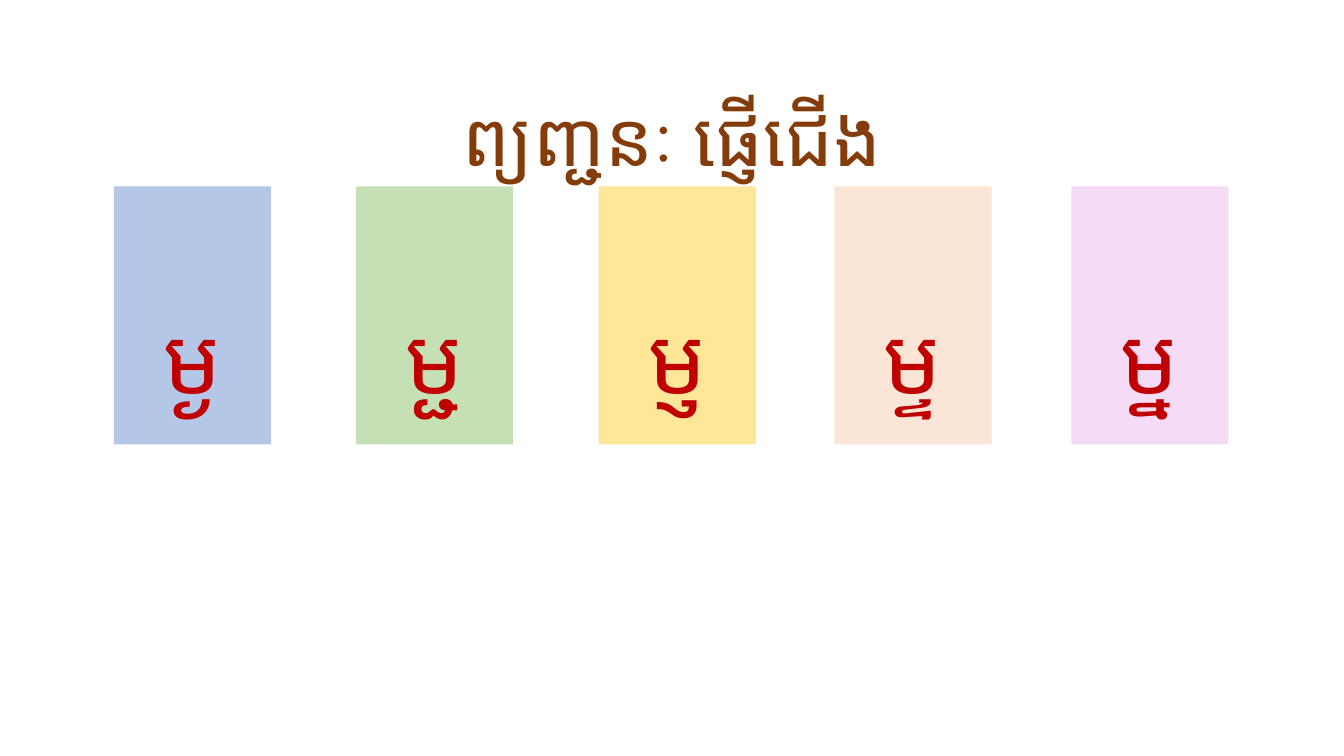
import pptx
import pptx.util
import pptx.dml.color
import pptx.enum.shapes
import pptx.enum.text
from pptx.util import Cm

TITLE = "ព្យញ្ជនៈ ផ្ញើជើង"

# letter, left edge in cm, card colour
CARDS = [
    ("ម្ង", 2.87, "B4C7E7"),
    ("ម្ជ", 8.97, "C5E0B4"),
    ("ម្ញ", 15.09, "FFE699"),
    ("ម្ទ", 21.03, "FBE5D6"),
    ("ម្ន", 27.0, "F6DBF7"),
]
CARD_TOP, CARD_WIDTH, CARD_HEIGHT = Cm(4.7), Cm(3.96), Cm(6.5)

THEME = {
    "title": {"font": "Lato", "size": 54, "color": "843C0B", "line_spacing": 1.5},
    "letter": {"font": "Arial", "size": 66, "color": "C00000", "line_spacing": 2.0},
}


def rgb(color):
    return pptx.dml.color.RGBColor.from_string(color)


def write_text(shape, text, *, font, size, color, line_spacing, anchor):
    frame = shape.text_frame
    frame.word_wrap = True
    frame.vertical_anchor = anchor
    paragraph = frame.paragraphs[0]
    paragraph.alignment = pptx.enum.text.PP_ALIGN.CENTER
    paragraph.line_spacing = line_spacing
    run = paragraph.add_run()
    run.text = text
    run.font.name = font
    run.font.size = pptx.util.Pt(size)
    run.font.color.rgb = rgb(color)


def add_card(slide, letter, left, fill):
    card = slide.shapes.add_shape(
        pptx.enum.shapes.MSO_SHAPE.RECTANGLE, Cm(left), CARD_TOP, CARD_WIDTH, CARD_HEIGHT
    )
    card.shadow.inherit = False
    card.fill.solid()
    card.fill.fore_color.rgb = rgb(fill)
    card.line.fill.background()
    write_text(card, letter, anchor=pptx.enum.text.MSO_ANCHOR.TOP, **THEME["letter"])


def main():
    presentation = pptx.Presentation()
    presentation.slide_width = Cm(33.87)
    presentation.slide_height = Cm(19.05)
    slide = presentation.slides.add_slide(presentation.slide_layouts[6])

    title = slide.shapes.add_textbox(Cm(2.33), Cm(1.01), Cm(29.21), Cm(3.68))
    write_text(title, TITLE, anchor=pptx.enum.text.MSO_ANCHOR.MIDDLE, **THEME["title"])
    for letter, left, fill in CARDS:
        add_card(slide, letter, left, fill)

    presentation.save("out.pptx")


if __name__ == "__main__":
    main()
